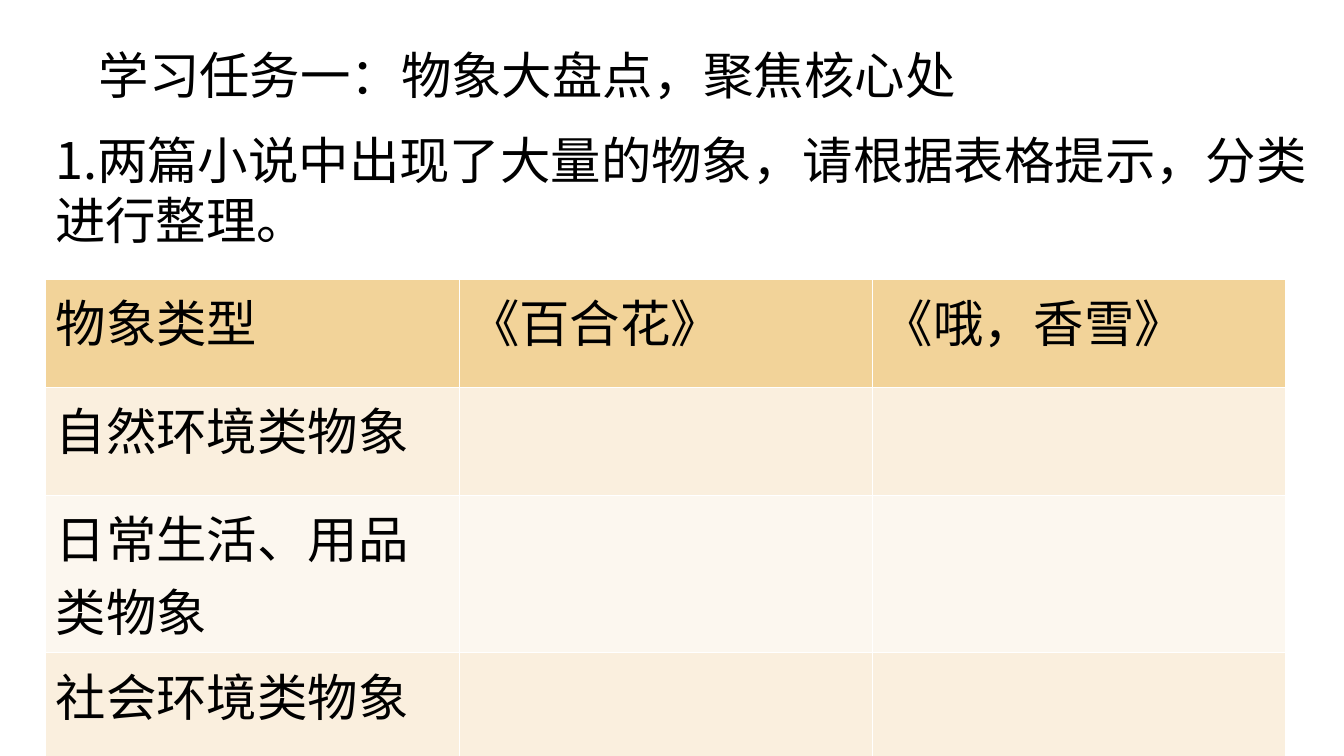
from dataclasses import dataclass

import pptx
import pptx.dml.color
import pptx.oxml
import pptx.oxml.ns
import pptx.util
from pptx.dml.color import RGBColor
from pptx.util import Cm

BLACK = RGBColor(0x00, 0x00, 0x00)
WHITE = RGBColor(0xFF, 0xFF, 0xFF)
GOLD = RGBColor(0xF2, 0xD3, 0x99)
PEACH = RGBColor(0xFA, 0xEF, 0xDE)
CREAM = RGBColor(0xFC, 0xF7, 0xEF)
FONT = "Noto Sans CJK SC"
SIZE = pptx.util.Pt(36)
BORDER_WIDTH = pptx.util.Pt(1)
COLUMN_WIDTH = Cm(10.42)
ONE_LINE = 2.72
TWO_LINES = 3.97


@dataclass(frozen=True)
class Heading:
    text: str
    left: float
    top: float
    width: float
    height: float


@dataclass(frozen=True)
class Category:
    cells: tuple[str, str, str]
    fill: RGBColor
    height: float = ONE_LINE


HEADINGS = (
    Heading("学习任务一：物象大盘点，聚焦核心处", 2.24, 0.99, 24.18, 2.77),
    Heading("1.两篇小说中出现了大量的物象，请根据表格提示，分类进行整理。",
            1.14, 3.12, 32.05, 2.74),
)
CATEGORIES = (
    Category(("物象类型", "《百合花》", "《哦，香雪》"), GOLD),
    Category(("自然环境类物象", "", ""), PEACH),
    Category(("日常生活、用品类物象", "", ""), CREAM, TWO_LINES),
    Category(("社会环境类物象", "", ""), PEACH),
)


def add_text(paragraph, text: str) -> None:
    run = paragraph.add_run()
    run.text = text
    run.font.name = FONT
    run.font.size = SIZE
    run.font.color.rgb = BLACK
    # East Asian characters take their own typeface entry
    east_asian = pptx.oxml.parse_xml(
        f'<a:ea {pptx.oxml.ns.nsdecls("a")} typeface="{FONT}"/>')
    run.font._element.find(pptx.oxml.ns.qn("a:latin")).addnext(east_asian)


def add_heading(slide, heading: Heading) -> None:
    box = slide.shapes.add_textbox(Cm(heading.left), Cm(heading.top),
                                   Cm(heading.width), Cm(heading.height))
    box.text_frame.word_wrap = True
    add_text(box.text_frame.paragraphs[0], heading.text)


def set_borders(cell) -> None:
    properties = cell._tc.get_or_add_tcPr()
    for position, side in enumerate(("lnL", "lnR", "lnT", "lnB")):
        properties.insert(position, pptx.oxml.parse_xml(
            f'<a:{side} {pptx.oxml.ns.nsdecls("a")} w="{BORDER_WIDTH}">'
            f'<a:solidFill><a:srgbClr val="{WHITE}"/></a:solidFill></a:{side}>'))


def add_category_table(slide, categories: tuple[Category, ...]) -> None:
    columns = len(categories[0].cells)
    total_height = sum(category.height for category in categories)
    table = slide.shapes.add_table(
        len(categories), columns, Cm(1.15), Cm(7.04),
        COLUMN_WIDTH * columns, Cm(total_height)).table
    for column in table.columns:
        column.width = COLUMN_WIDTH
    for row, category in enumerate(categories):
        table.rows[row].height = Cm(category.height)
        for column, text in enumerate(category.cells):
            cell = table.cell(row, column)
            cell.fill.solid()
            cell.fill.fore_color.rgb = category.fill
            set_borders(cell)
            if text:
                add_text(cell.text_frame.paragraphs[0], text)


def main() -> None:
    presentation = pptx.Presentation()
    presentation.slide_width = Cm(33.87)
    presentation.slide_height = Cm(19.05)
    slide = presentation.slides.add_slide(presentation.slide_layouts[6])

    # Task title and instruction
    for heading in HEADINGS:
        add_heading(slide, heading)

    # Table of object types in the two stories
    add_category_table(slide, CATEGORIES)

    presentation.save("out.pptx")


if __name__ == "__main__":
    main()
